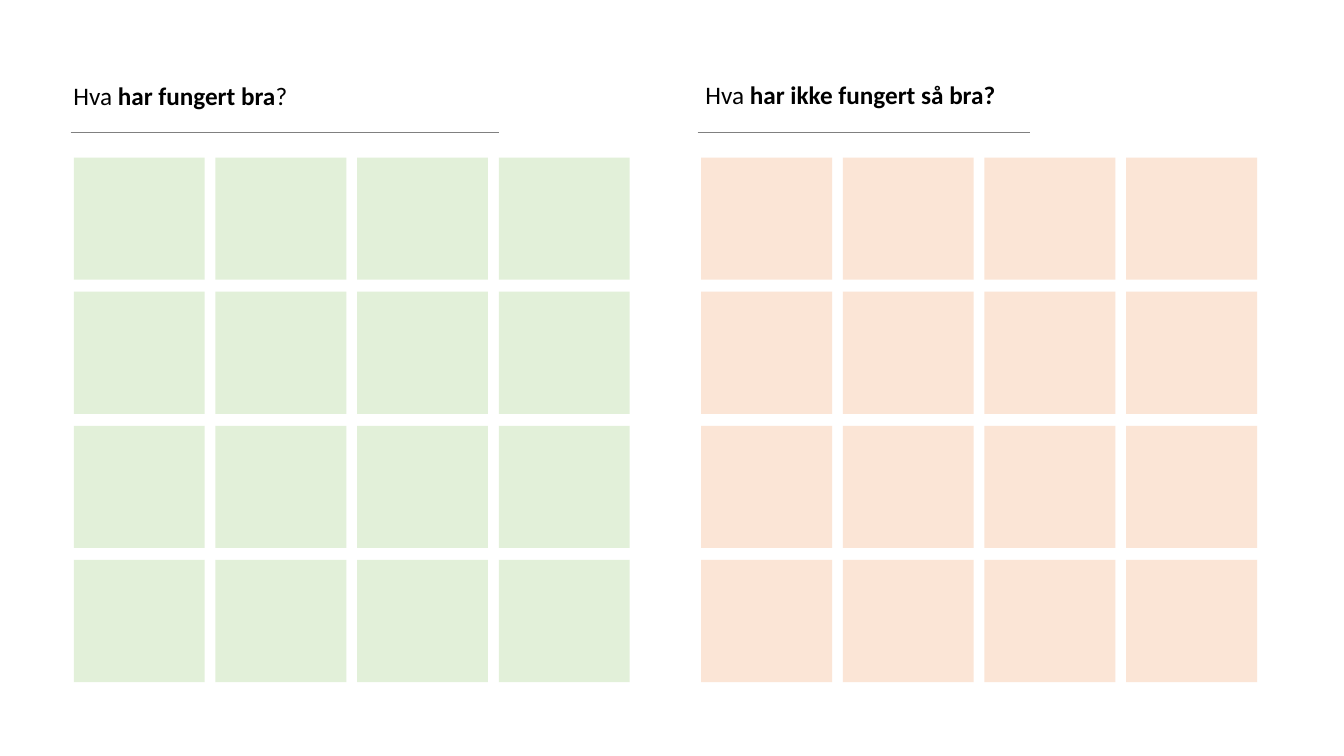
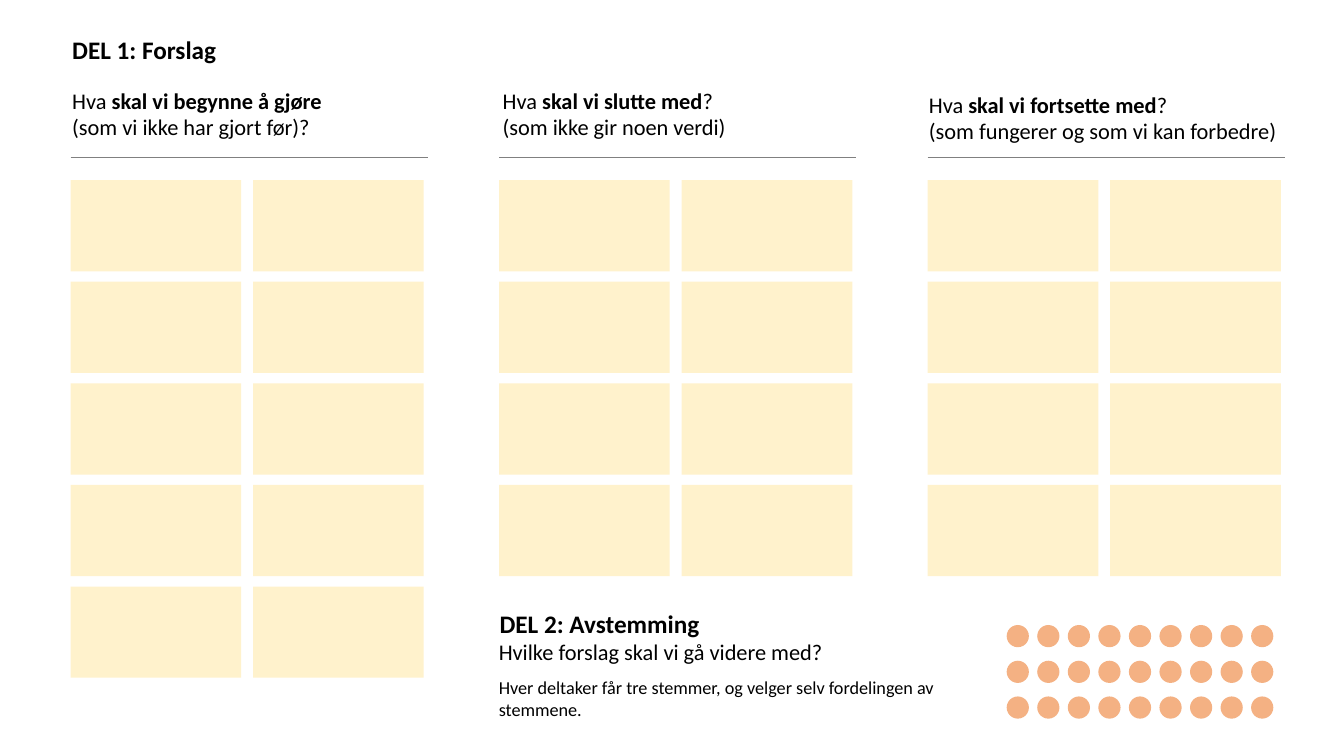
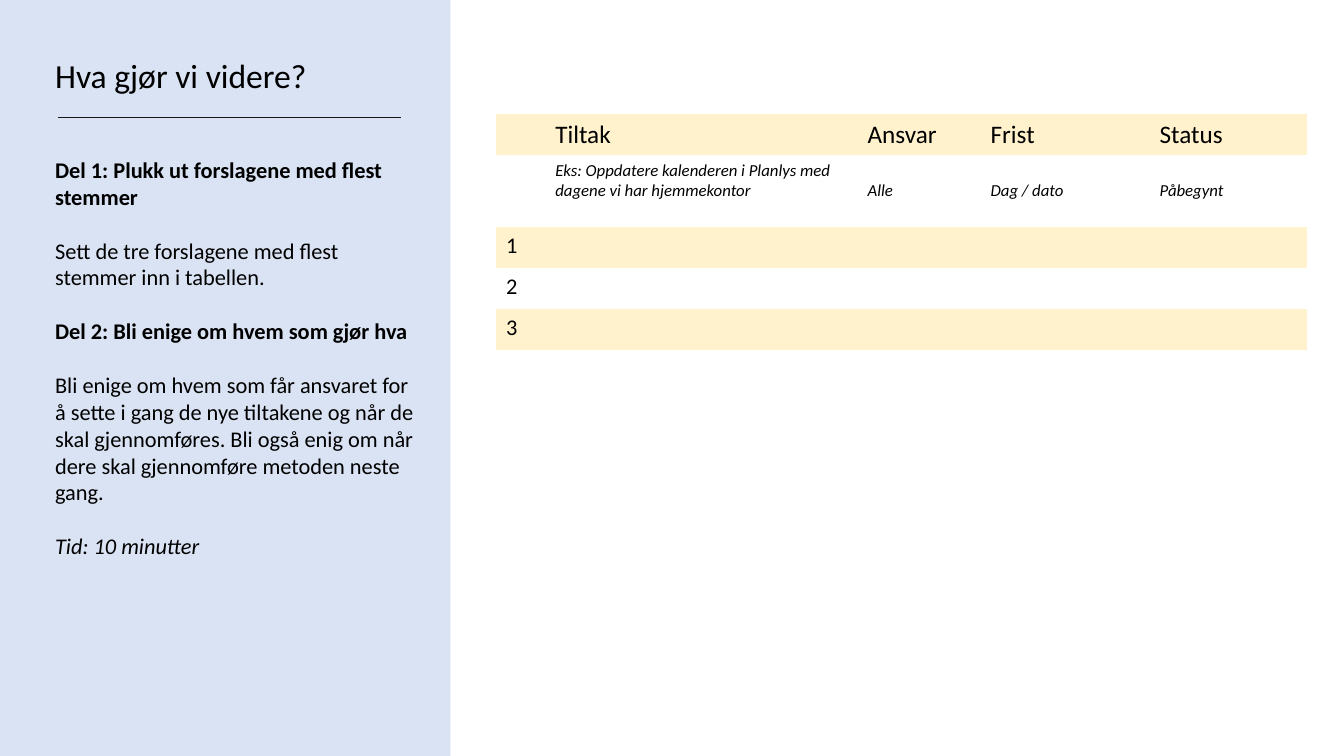
"""Build three workshop slides: review, suggestions with voting, and follow-up."""
from itertools import product

from lxml import etree
from pptx import Presentation
from pptx.dml.color import RGBColor
from pptx.enum.shapes import MSO_CONNECTOR, MSO_SHAPE
from pptx.enum.text import MSO_ANCHOR
from pptx.oxml.ns import qn
from pptx.util import Cm, Pt

RECTANGLE, OVAL = MSO_SHAPE.RECTANGLE, MSO_SHAPE.OVAL
STRAIGHT = MSO_CONNECTOR.STRAIGHT
TOP, MIDDLE, BOTTOM = MSO_ANCHOR.TOP, MSO_ANCHOR.MIDDLE, MSO_ANCHOR.BOTTOM

FONT = "Calibri"
COLORS = {
    "text": "000000",
    "rule": "808080",
    "title_rule": "181717",
    "good": "E2F0D9",
    "bad": "FBE5D6",
    "note": "FFF2CC",
    "vote": "F4B183",
    "sidebar": "DAE3F3",
}
PLAIN_TABLE = "{2D5ABB26-0587-4C30-8999-92F81FD0307C}"


def color(name):
    """Return the palette colour with this name."""
    return RGBColor.from_string(COLORS[name])


def add_runs(paragraph, runs, size):
    """Write (text, style) runs, where style is "", "b" or "i"."""
    for text, style in runs:
        run = paragraph.add_run()
        run.text = text
        run.font.name = FONT
        run.font.size = Pt(size)
        run.font.bold = style == "b"
        run.font.italic = style == "i"
        run.font.color.rgb = color("text")


def add_text(slide, box, paragraphs, size, anchor=TOP, gap=0, spacing=1.0):
    """Add a wrapped text box; each paragraph is a list of runs."""
    frame = slide.shapes.add_textbox(*map(Cm, box)).text_frame
    frame.word_wrap = True
    frame.vertical_anchor = anchor
    for index, runs in enumerate(paragraphs):
        paragraph = frame.add_paragraph() if index else frame.paragraphs[0]
        paragraph.space_after = Pt(gap)
        paragraph.line_spacing = spacing
        add_runs(paragraph, runs, size)


def add_rule(slide, left, top, length, tint="rule", width=0.25):
    """Add a thin horizontal line."""
    rule = slide.shapes.add_connector(
        STRAIGHT, Cm(left), Cm(top), Cm(left + length), Cm(top))
    rule.line.color.rgb = color(tint)
    rule.line.width = Pt(width)
    etree.SubElement(rule._element.spPr, qn("a:effectLst"))


def add_block(slide, kind, box, tint):
    """Add a flat shape without an outline."""
    block = slide.shapes.add_shape(kind, *map(Cm, box))
    block.shadow.inherit = False
    block.fill.solid()
    block.fill.fore_color.rgb = color(tint)
    block.line.fill.background()


def add_grid(slide, kind, origin, counts, size, pitch, tint):
    """Add equal blocks in counts = (columns, rows)."""
    for row, column in product(range(counts[1]), range(counts[0])):
        corner = (origin[0] + column * pitch[0], origin[1] + row * pitch[1])
        add_block(slide, kind, corner + size, tint)


def add_action_table(slide, origin, widths, heights, rows):
    """Add a banded table from rows of (texts, size, style, anchors)."""
    table = slide.shapes.add_table(
        len(rows), len(widths), *map(Cm, origin),
        Cm(sum(widths)), Cm(sum(heights))).table
    table.first_row = table.horz_banding = False
    table._tbl.tblPr.find(qn("a:tableStyleId")).text = PLAIN_TABLE
    for column, width in zip(table.columns, widths):
        column.width = Cm(width)
    for index, (texts, size, style, anchors) in enumerate(rows):
        table.rows[index].height = Cm(heights[index])
        for cell, text, anchor in zip(table.rows[index].cells, texts, anchors):
            if index % 2:
                cell.fill.background()
            else:
                cell.fill.solid()
                cell.fill.fore_color.rgb = color("note")
            cell.vertical_anchor = anchor
            if text:
                add_runs(cell.text_frame.paragraphs[0], [(text, style)], size)


def build_review(slide):
    """Show what has worked well and what has not."""
    sides = [
        (1.86, 1.78, 10.8, (1.6, 1.9, 10.72, 1.02), "good",
         [("Hva ", ""), ("har fungert bra", "b"), ("?", "")]),
        (17.67, 17.58, 8.38, (17.53, 1.88, 8.76, 1.02), "bad",
         [("Hva ", ""), ("har ikke fungert så bra?", "b")]),
    ]
    for left, rule_left, rule_length, heading_box, tint, heading in sides:
        add_text(slide, heading_box, [heading], 18)
        add_rule(slide, rule_left, 3.33, rule_length)
        add_grid(slide, RECTANGLE, (left, 3.97), (4, 4), (3.3, 3.08),
                 (3.57, 3.38), tint)


def build_suggestions(slide):
    """Collect suggestions in three columns and vote on them."""
    columns = [
        (1.57, 2.06, 5, [[("Hva ", ""), ("skal vi begynne å gjøre", "b")],
                         [("(som vi ikke har gjort før)?", "")]]),
        (12.42, 2.06, 4, [[("Hva ", ""), ("skal vi slutte med", "b"), ("?", "")],
                          [("(som ikke gir noen verdi)", "")]]),
        (23.16, 2.16, 4, [[("Hva ", ""), ("skal vi fortsette med", "b"), ("?", "")],
                          [("(som fungerer og som vi kan forbedre)", "")]]),
    ]
    add_text(slide, (1.57, 0.74, 11.05, 1.02), [[("DEL 1: Forslag", "b")]], 18)
    for index, (heading_left, heading_top, rows, heading) in enumerate(columns):
        left = 1.78 + index * 10.8
        add_text(slide, (heading_left, heading_top, 9.53, 1.63), heading, 16)
        add_rule(slide, left, 3.96, 9)
        add_grid(slide, RECTANGLE, (left, 4.54), (2, rows), (4.3, 2.3),
                 (4.6, 2.56), "note")
    add_text(slide, (12.34, 15.21, 11.05, 1.02),
             [[("DEL 2: Avstemming", "b")]], 18)
    add_text(slide, (12.32, 15.95, 11.05, 0.94),
             [[("Hvilke forslag skal vi gå videre med?", "")]], 16)
    add_text(slide, (12.32, 16.92, 11.63, 1.37),
             [[("Hver deltaker får tre stemmer, og velger selv fordelingen "
                "av stemmene.", "")]], 13)
    add_grid(slide, OVAL, (25.37, 15.75), (9, 3), (0.56, 0.56),
             (0.77, 0.9), "vote")


def build_follow_up(slide):
    """Explain the next steps beside the table of actions."""
    add_block(slide, RECTANGLE, (0, 0, 11.35, 19.05), "sidebar")
    add_text(slide, (1.14, -0.56, 9.58, 3.1), [[("Hva gjør vi videre?", "")]],
             24, anchor=BOTTOM, spacing=0.9)
    add_rule(slide, 1.45, 2.95, 8.66, "title_rule", 0.5)
    steps = [
        ("Del 1: Plukk ut forslagene med flest stemmer", "b"),
        ("Sett de tre forslagene med flest stemmer inn i tabellen.", ""),
        ("Del 2: Bli enige om hvem som gjør hva", "b"),
        ("Bli enige om hvem som får ansvaret for å sette i gang de nye "
         "tiltakene og når de skal gjennomføres. Bli også enig om når dere "
         "skal gjennomføre metoden neste gang.", ""),
        ("Tid: 10 minutter", "i"),
    ]
    add_text(slide, (1.14, 3.81, 9.58, 9.93), [[step] for step in steps], 16,
             gap=19.2)
    example = ["", "Eks: Oppdatere kalenderen i Planlys med dagene vi har "
               "hjemmekontor", "Alle", "Dag / dato", "Påbegynt"]
    rows = [
        (["", "Tiltak", "Ansvar", "Frist", "Status"], 18, "", [TOP] * 5),
        (example, 12, "i", [TOP] * 2 + [MIDDLE] * 3),
    ]
    rows += [([number, "", "", "", ""], 16, "", [TOP] * 5) for number in "123"]
    add_action_table(slide, (12.5, 2.88), [1.24, 7.87, 3.1, 4.26, 3.96],
                     [1.03, 1.82, 1.03, 1.03, 1.03], rows)


def main():
    """Build and save the presentation."""
    deck = Presentation()
    deck.slide_width, deck.slide_height = Cm(33.87), Cm(19.05)
    for build in (build_review, build_suggestions, build_follow_up):
        build(deck.slides.add_slide(deck.slide_layouts[6]))
    deck.save("out.pptx")


if __name__ == "__main__":
    main()
